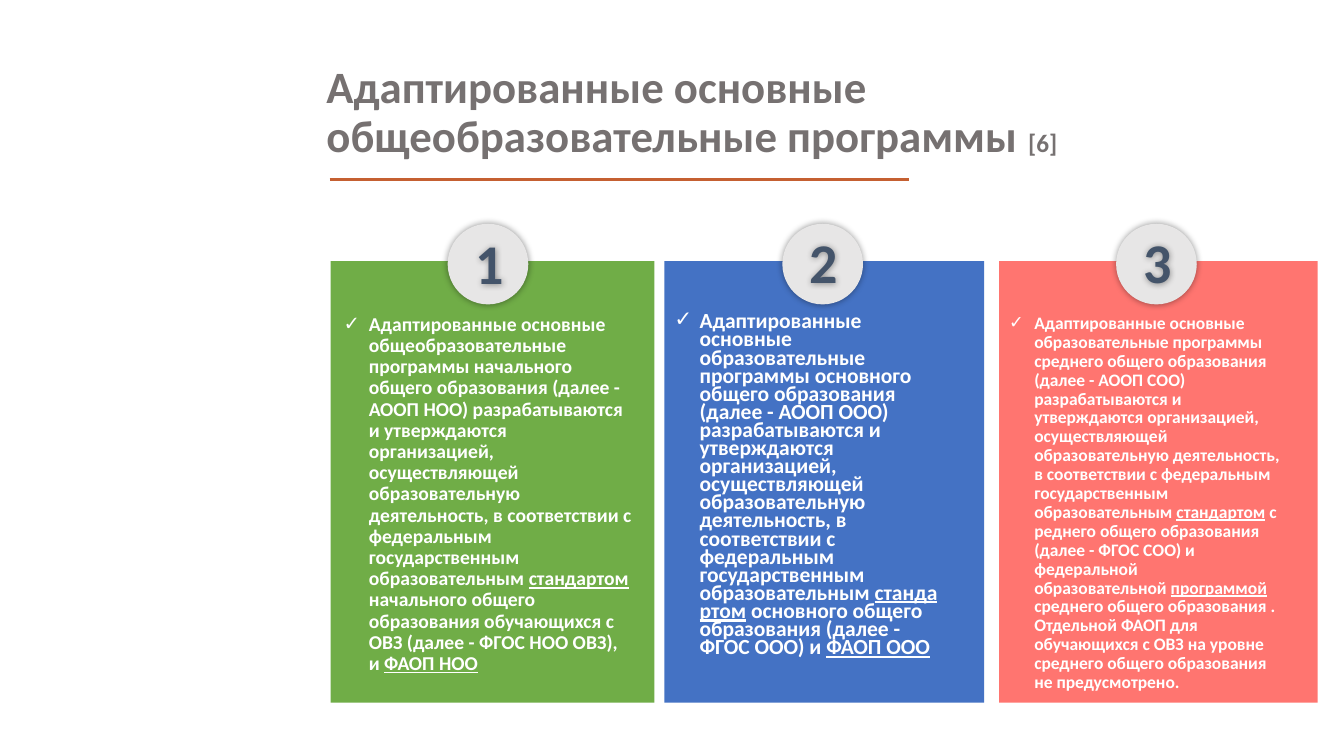
from lxml import etree
from pptx import Presentation
from pptx import util as u
from pptx.dml.color import RGBColor
from pptx.enum import shapes, text
from pptx.oxml import ns

WHITE = RGBColor(0xFF, 0xFF, 0xFF)
TITLE_GRAY = RGBColor(0x76, 0x71, 0x71)
RULE_ORANGE = RGBColor(0xC5, 0x60, 0x31)
BADGE_GRAY = RGBColor(0xE7, 0xE6, 0xE6)
NUMBER_SLATE = RGBColor(0x44, 0x54, 0x6A)
GREEN = RGBColor(0x70, 0xAD, 0x47)
BLUE = RGBColor(0x44, 0x72, 0xC4)
CORAL = RGBColor(0xFF, 0x75, 0x70)

PX = 9144
CARD_TOP, CARD_HEIGHT = 259, 438
BADGE_TOP, BADGE_SIZE = 222, 80
TEXT_TOP = 307
NO_BREAK_MARK, NO_BREAK_SPACE = "~", chr(160)

CARDS = [
    {
        "card": (328, 321), "color": GREEN, "badge": 444, "label": (446, 222),
        "body": (331, 307, 350), "size": 14, "spacing": 0.9,
        "runs": [
            "Адаптированные основные общеобразовательные программы начального общего образования "
            "(далее - АООП НОО) разрабатываются и утверждаются организацией, осуществляющей "
            "образовательную деятельность, в соответствии с федеральным государственным образовательным~",
            "стандартом",
            "~начального общего образования обучающихся с ОВЗ (далее - ФГОС НОО ОВЗ), и~",
            "ФАОП НОО",
        ],
    },
    {
        "card": (659, 317), "color": BLUE, "badge": 776, "label": (777, 221),
        "body": (659, 282, 374), "size": 15.4, "spacing": 0.7,
        "runs": [
            "Адаптированные основные образовательные программы основного общего образования "
            "(далее - АООП ООО) разрабатываются и утверждаются организацией, осуществляющей "
            "образовательную деятельность, в соответствии с федеральным государственным образовательным~",
            "стандартом",
            "~основного общего образования (далее - ФГОС ООО) и~",
            "ФАОП ООО",
        ],
    },
    {
        "card": (991, 316), "color": CORAL, "badge": 1107, "label": (1108, 221),
        "body": (991, 290, 388), "size": 12.5, "spacing": 0.9,
        "runs": [
            "Адаптированные основные образовательные программы среднего общего образования "
            "(далее - АООП СОО) разрабатываются и утверждаются организацией, осуществляющей "
            "образовательную деятельность, в соответствии с федеральным государственным образовательным~",
            "стандартом",
            "~среднего общего образования (далее - ФГОС СОО) и федеральной образовательной~",
            "программой",
            "~ среднего общего образования . Отдельной ФАОП для обучающихся с ОВЗ на уровне "
            "среднего общего образования не предусмотрено.",
        ],
    },
]


class SlideBuilder:
    font_name = "Calibri"

    def __init__(self, slide):
        self.slide = slide

    def box(self, *lengths):
        return [length * PX for length in lengths]

    def shape(self, kind, left, top, width, height, color):
        shape = self.slide.shapes.add_shape(kind, *self.box(left, top, width, height))
        shape.shadow.inherit = False
        shape.fill.solid()
        shape.fill.fore_color.rgb = color
        shape.line.fill.background()
        return shape

    def glow(self, shape):
        shape.shadow.inherit = False
        effects = shape._element.spPr.find(ns.qn("a:effectLst"))
        shadow = etree.SubElement(effects, ns.qn("a:outerShdw"), blurRad=str(u.Pt(5)), dist="0", dir="0")
        color = etree.SubElement(shadow, ns.qn("a:srgbClr"), val="000000")
        etree.SubElement(color, ns.qn("a:alpha"), val="40000")

    def rule(self, left, right, y, color, weight):
        line = self.slide.shapes.add_connector(
            shapes.MSO_CONNECTOR.STRAIGHT, *self.box(left, y, right, y))
        line.line.color.rgb = color
        line.line.width = u.Pt(weight)
        etree.SubElement(line._element.spPr, ns.qn("a:effectLst"))

    def text(self, left, top, width, height, runs, color, bullet=None,
             anchor=text.MSO_ANCHOR.TOP, **paragraph_format):
        shape = self.slide.shapes.add_textbox(*self.box(left, top, width, height))
        frame = shape.text_frame
        frame.word_wrap = True
        frame.vertical_anchor = anchor
        paragraph = frame.paragraphs[0]
        for name, value in paragraph_format.items():
            setattr(paragraph, name, value)
        if bullet:
            self.bullet(paragraph, bullet)
        for content, run_format in runs:
            run = paragraph.add_run()
            run.text = content.replace(NO_BREAK_MARK, NO_BREAK_SPACE)
            for name, value in {"name": self.font_name, "bold": True, **run_format}.items():
                setattr(run.font, name, value)
            run.font.color.rgb = color
        return shape

    def bullet(self, paragraph, mark):
        properties = paragraph._p.get_or_add_pPr()
        properties.set("marL", str(25 * PX))
        properties.set("indent", str(-25 * PX))
        etree.SubElement(properties, ns.qn("a:buFont"), typeface=self.font_name)
        etree.SubElement(properties, ns.qn("a:buChar"), char=mark)

    def card(self, number, card):
        left, width = card["card"]
        self.shape(shapes.MSO_SHAPE.RECTANGLE, left, CARD_TOP, width, CARD_HEIGHT, card["color"])
        body_left, body_width, body_height = card["body"]
        runs = [(content, {"size": u.Pt(card["size"]), "underline": index % 2 == 1})
                for index, content in enumerate(card["runs"])]
        self.text(body_left, TEXT_TOP, body_width, body_height, runs, WHITE,
                  bullet="✓", line_spacing=card["spacing"])
        badge = self.shape(shapes.MSO_SHAPE.OVAL, card["badge"], BADGE_TOP,
                           BADGE_SIZE, BADGE_SIZE, BADGE_GRAY)
        self.glow(badge)
        label = self.text(*card["label"], BADGE_SIZE, 77,
                          [(str(number), {"size": u.Pt(40)})], NUMBER_SLATE,
                          alignment=text.PP_ALIGN.CENTER)
        self.glow(label)


def main():
    presentation = Presentation()
    presentation.slide_width = 1333 * PX
    presentation.slide_height = 750 * PX
    builder = SlideBuilder(presentation.slides.add_slide(presentation.slide_layouts[6]))
    builder.rule(327, 902, 178, RULE_ORANGE, 2.5)
    builder.text(314, 40, 986, 145, [
        ("Адаптированные основные общеобразовательные программы ", {"size": u.Pt(32)}),
        ("[6]", {"size": u.Pt(18)}),
    ], TITLE_GRAY, anchor=text.MSO_ANCHOR.MIDDLE, line_spacing=0.9)
    for number, card in enumerate(CARDS, 1):
        builder.card(number, card)
    presentation.save("out.pptx")


if __name__ == "__main__":
    main()
